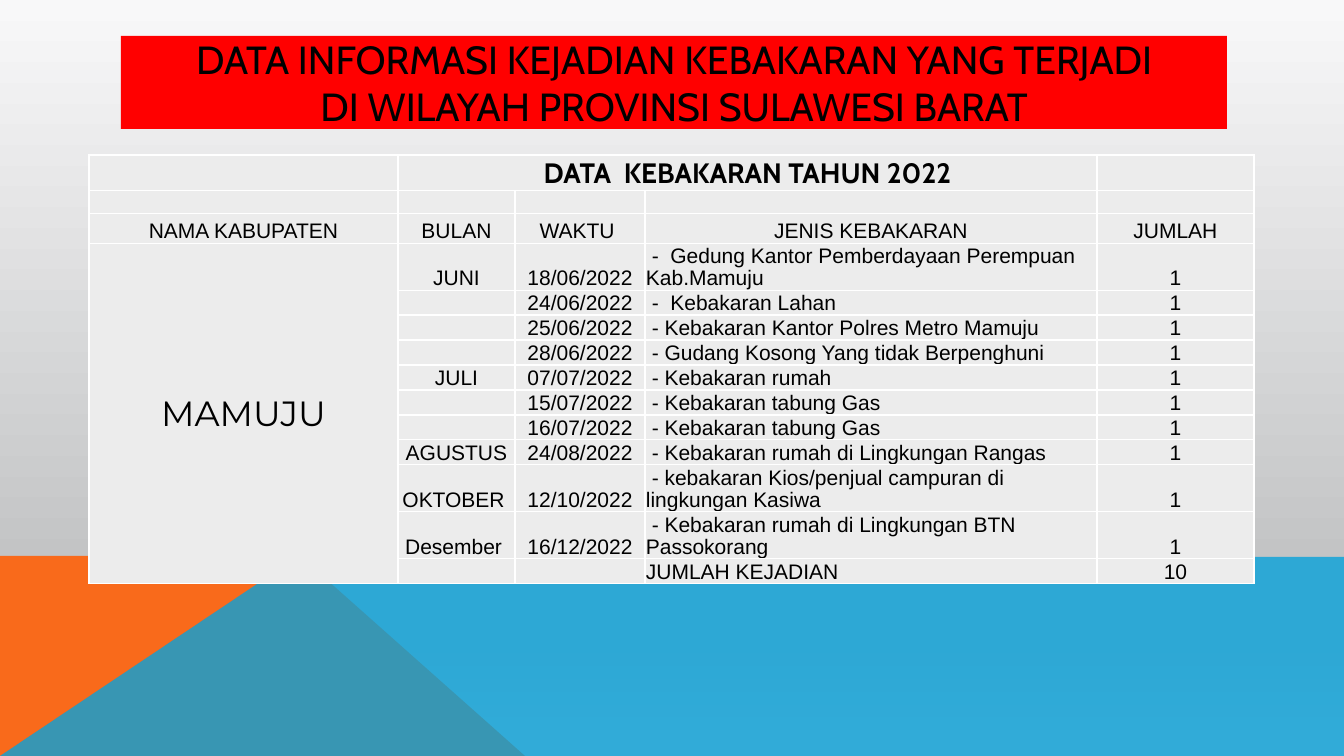
from typing import NamedTuple

from lxml.etree import SubElement
from pptx import Presentation
from pptx.dml.color import RGBColor
from pptx.enum.shapes import MSO_SHAPE
from pptx.enum.text import MSO_ANCHOR, PP_ALIGN
from pptx.oxml.ns import qn
from pptx.util import Pt

PX = 12192000 / 1344
BLACK = RGBColor(0x00, 0x00, 0x00)
WHITE = RGBColor(0xFF, 0xFF, 0xFF)
RED = RGBColor(0xFF, 0x00, 0x00)
ORANGE = RGBColor(0xF9, 0x6A, 0x1B)
BLUE = RGBColor(0x08, 0xA1, 0xD9)
CELL_GREY = RGBColor(0xEC, 0xEC, 0xEC)
BACKGROUND_STOPS = [
    (0, RGBColor(0xF8, 0xF8, 0xF9)),
    (74, RGBColor(0xC3, 0xC4, 0xC5)),
    (83, RGBColor(0xC3, 0xC4, 0xC5)),
    (100, RGBColor(0xD7, 0xD7, 0xD8)),
]


class Fire(NamedTuple):
    month: str
    date: str
    kind: str
    count: str = "1"
    height: int = 25


class Band(NamedTuple):
    points: list[tuple[int, int]]
    color: RGBColor
    opacity: int


BANDS = [
    Band([(0, 756), (0, 556), (300, 556), (525, 756)], ORANGE, 100),
    Band([(0, 756), (299, 556), (1344, 557), (1344, 756)], BLUE, 80),
]
COLUMN_WIDTHS = [309, 117, 130, 452, 157]
HEADER_HEIGHTS = [35, 23, 30]
HEADINGS = ["NAMA KABUPATEN", "BULAN", "WAKTU ", "JENIS KEBAKARAN", "JUMLAH"]
KIND_COLUMN = 3
FIRES = [
    Fire("JUNI", "18/06/2022", " -  Gedung Kantor Pemberdayaan Perempuan  Kab.Mamuju", height=47),
    Fire("", "24/06/2022", " -  Kebakaran Lahan"),
    Fire("", "25/06/2022", " - Kebakaran Kantor Polres Metro Mamuju"),
    Fire("", "28/06/2022", " - Gudang Kosong Yang tidak Berpenghuni"),
    Fire("JULI", "07/07/2022", " - Kebakaran rumah"),
    Fire("", "15/07/2022", " - Kebakaran tabung Gas"),
    Fire("", "16/07/2022", " - Kebakaran tabung Gas"),
    Fire("AGUSTUS", "24/08/2022", " - Kebakaran rumah di Lingkungan Rangas"),
    Fire("OKTOBER ", "12/10/2022", " - kebakaran Kios/penjual campuran di lingkungan Kasiwa", height=47),
    Fire("Desember ", "16/12/2022", " - Kebakaran rumah di Lingkungan BTN Passokorang", height=47),
    Fire("", "", "JUMLAH KEJADIAN", "10"),
]


def px(n: int) -> int:
    return round(n * PX)


def write(tf, text: str, *, size: int = 15, font: str = "Arial", bold: bool = False,
          align=PP_ALIGN.CENTER, spacing: float = 1.0) -> None:
    p = tf.paragraphs[0]
    p.alignment = align
    p.line_spacing = spacing
    for i, line in enumerate(text.split("\n")):
        if i:
            p.add_line_break()
        r = p.add_run()
        r.text = line
        r.font.size = Pt(size)
        r.font.name = font
        r.font.bold = bold
        r.font.color.rgb = BLACK


def paint_background(slide) -> None:
    fill = slide.background.fill
    fill.gradient()
    fill.gradient_angle = 270
    stops = slide.element.find(".//" + qn("a:gsLst"))
    for stop in list(stops):
        stops.remove(stop)
    for percent, color in BACKGROUND_STOPS:
        stop = SubElement(stops, qn("a:gs"), pos=str(percent * 1000))
        SubElement(stop, qn("a:srgbClr"), val=str(color))


def draw_band(slide, band: Band) -> None:
    start, *rest = band.points
    builder = slide.shapes.build_freeform(*start, scale=PX)
    builder.add_line_segments(rest, close=True)
    sp = builder.convert_to_shape()
    sp.shadow.inherit = False
    sp.line.fill.background()
    sp.fill.solid()
    sp.fill.fore_color.rgb = band.color
    if band.opacity < 100:
        color = sp.fill._xPr.find(".//" + qn("a:srgbClr"))
        SubElement(color, qn("a:alpha"), val=str(band.opacity * 1000))


def draw_title(slide) -> None:
    sp = slide.shapes.add_shape(MSO_SHAPE.RECTANGLE, px(121), px(36), px(1106), px(93))
    sp.shadow.inherit = False
    sp.line.fill.background()
    sp.fill.solid()
    sp.fill.fore_color.rgb = RED
    tf = sp.text_frame
    tf.word_wrap = True
    tf.vertical_anchor = MSO_ANCHOR.MIDDLE
    tf.margin_top = tf.margin_bottom = 0
    write(tf, "DATA INFORMASI KEJADIAN KEBAKARAN YANG TERJADI\n"
              "DI WILAYAH PROVINSI SULAWESI BARAT", size=28, font="Cabin")


def style_cell(cell) -> None:
    """Give the cell white borders, a grey fill, tight margins and a small empty line."""
    props = cell._tc.get_or_add_tcPr()
    for side in ("a:lnL", "a:lnR", "a:lnT", "a:lnB"):
        border = SubElement(props, qn(side), w=str(Pt(1)))
        color = SubElement(SubElement(border, qn("a:solidFill")), qn("a:srgbClr"))
        color.set("val", str(WHITE))
    cell.fill.solid()
    cell.fill.fore_color.rgb = CELL_GREY
    cell.margin_left = cell.margin_right = cell.margin_top = px(1)
    cell.margin_bottom = 0
    cell.vertical_anchor = MSO_ANCHOR.BOTTOM
    SubElement(cell.text_frame.paragraphs[0]._p, qn("a:endParaRPr"), sz="1000")


def draw_table(slide) -> None:
    heights = HEADER_HEIGHTS + [fire.height for fire in FIRES]
    frame = slide.shapes.add_table(len(heights), len(COLUMN_WIDTHS), px(89), px(155),
                                   px(sum(COLUMN_WIDTHS)), px(sum(heights)))
    table = frame.table
    table.first_row = table.horz_banding = False
    for column, width in zip(table.columns, COLUMN_WIDTHS):
        column.width = px(width)
    for row, height in zip(table.rows, heights):
        row.height = px(height)
    for cell in table.iter_cells():
        style_cell(cell)

    caption = table.cell(0, 1)
    caption.merge(table.cell(0, 3))
    write(caption.text_frame, "DATA  KEBAKARAN TAHUN 2022", size=20, font="Cabin", bold=True)
    for col, heading in enumerate(HEADINGS):
        write(table.cell(2, col).text_frame, heading)

    first = len(HEADER_HEIGHTS)
    regency = table.cell(first, 0)
    regency.merge(table.cell(len(heights) - 1, 0))
    regency.vertical_anchor = MSO_ANCHOR.MIDDLE
    write(regency.text_frame, "MAMUJU", size=25, font="Montserrat")
    for row, fire in enumerate(FIRES, first):
        for col, text in enumerate((fire.month, fire.date, fire.kind, fire.count), 1):
            if text:
                align = PP_ALIGN.LEFT if col == KIND_COLUMN else PP_ALIGN.CENTER
                write(table.cell(row, col).text_frame, text, align=align, spacing=0.95)


def main() -> None:
    prs = Presentation()
    prs.slide_width, prs.slide_height = px(1344), px(756)
    slide = prs.slides.add_slide(prs.slide_layouts[6])
    paint_background(slide)
    for band in BANDS:
        draw_band(slide, band)
    draw_title(slide)
    draw_table(slide)
    prs.save("out.pptx")


if __name__ == "__main__":
    main()
